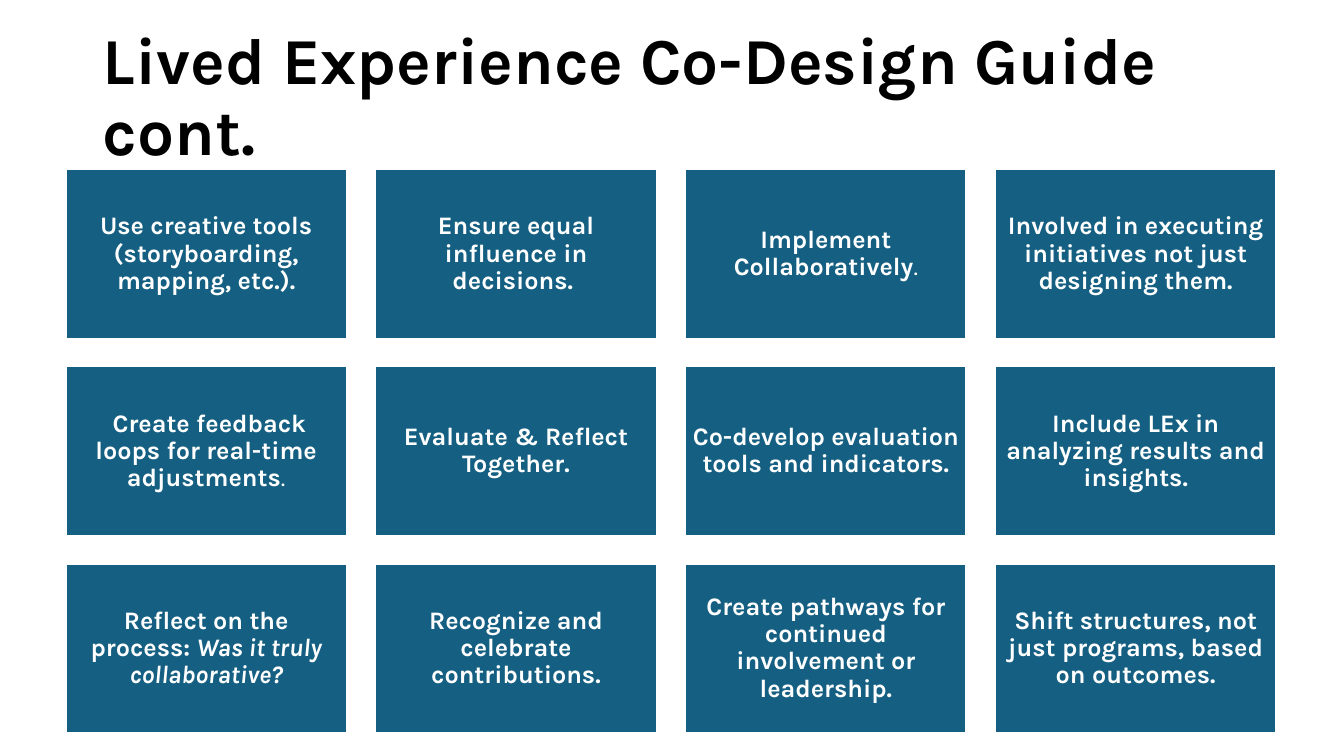
"""Build the co-design guide slide: a title above a grid of step cards."""
from pptx import Presentation, util as u
from pptx.dml.color import RGBColor
from pptx.enum import shapes, text

BLUE = RGBColor(0x15, 0x60, 0x82)
WHITE = RGBColor(0xFF, 0xFF, 0xFF)
BLACK = RGBColor(0, 0, 0)
FONT = "Karla"
COLUMNS = 4
LEFT, TOP = 0.65, 1.68
CARD_W, CARD_H = 2.79, 1.68
PITCH_X, PITCH_Y = 3.073, 1.955

BOLD, PLAIN, ITALIC = (True, False), (False, False), (True, True)
STEPS = [
    [("Use creative tools (storyboarding, mapping, etc.).", BOLD)],
    [("Ensure equal influence in decisions. ", BOLD)],
    [("Implement Collaboratively", BOLD), (".", PLAIN)],
    [("Involved in executing initiatives not just designing them.", BOLD)],
    [(" Create feedback loops for real-time adjustments", BOLD), (".", PLAIN)],
    [("Evaluate & Reflect Together.", BOLD)],
    [("Co-develop evaluation tools and indicators.", BOLD)],
    [("Include LEx in analyzing results and insights.", BOLD)],
    [("Reflect on the process: ", BOLD), ("Was it truly collaborative?", ITALIC)],
    [("Recognize and celebrate contributions.", BOLD)],
    [("Create pathways for continued involvement or leadership.", BOLD)],
    [("Shift structures, not just programs, based on outcomes.", BOLD)],
]


def write(tf, runs, size, color, align):
    """Fill a text frame with one paragraph of styled runs."""
    tf.word_wrap = True
    tf.vertical_anchor = text.MSO_ANCHOR.MIDDLE
    p = tf.paragraphs[0]
    p.alignment = align
    p.line_spacing = 0.9
    p.font.name = FONT
    p.font.size = u.Pt(size)
    p.font.color.rgb = color
    for words, (bold, italic) in runs:
        r = p.add_run()
        r.text = words
        r.font.bold = bold
        r.font.italic = italic


def add_title(s, words):
    """Add the slide's heading."""
    box = s.shapes.add_textbox(u.Inches(0.92), u.Inches(0.4),
                               u.Inches(11.5), u.Inches(1.16))
    write(box.text_frame, [(words, BOLD)], 46.8, BLACK, text.PP_ALIGN.LEFT)


def add_card(s, column, row, runs):
    """Add one step card at a grid position."""
    sp = s.shapes.add_shape(
        shapes.MSO_SHAPE.RECTANGLE,
        u.Inches(LEFT + column * PITCH_X), u.Inches(TOP + row * PITCH_Y),
        u.Inches(CARD_W), u.Inches(CARD_H))
    sp.shadow.inherit = False
    sp.fill.solid()
    sp.fill.fore_color.rgb = BLUE
    sp.line.color.rgb = WHITE
    sp.line.width = u.Pt(1.5)
    tf = sp.text_frame
    tf.margin_left = tf.margin_right = u.Inches(0.07)
    tf.margin_top = tf.margin_bottom = u.Inches(0.07)
    write(tf, runs, 18, WHITE, text.PP_ALIGN.CENTER)


def main():
    """Lay out the slide and save it."""
    prs = Presentation()
    prs.slide_width, prs.slide_height = u.Inches(13.33), u.Inches(7.5)
    s = prs.slides.add_slide(prs.slide_layouts[6])
    add_title(s, "Lived Experience Co-Design Guide cont.")
    for i, runs in enumerate(STEPS):
        row, column = divmod(i, COLUMNS)
        add_card(s, column, row, runs)
    prs.save("out.pptx")


if __name__ == "__main__":
    main()
